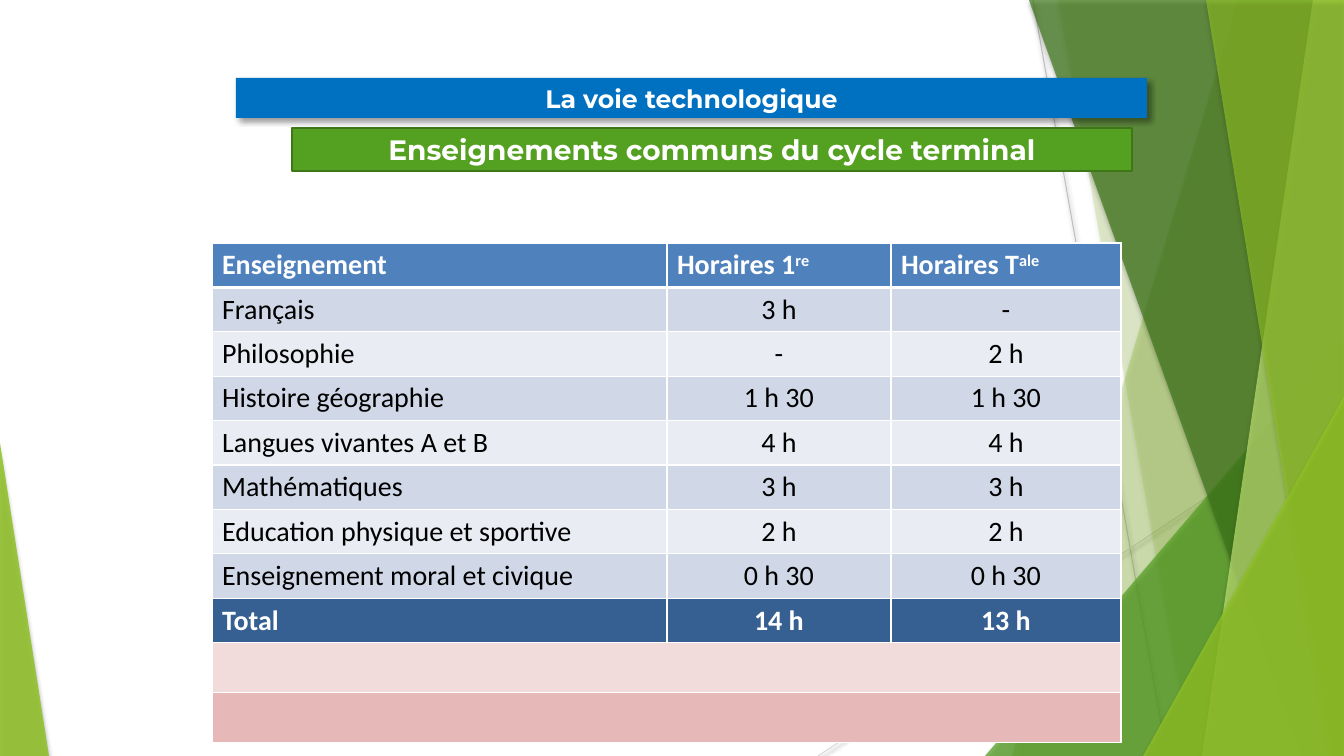
"""Build the slide of common lessons and weekly hours in the technological track."""
import lxml.etree
import pptx
import pptx.dml.color
import pptx.enum.shapes
import pptx.enum.text
import pptx.oxml.ns
import pptx.util

RGBColor = pptx.dml.color.RGBColor
MSO_SHAPE = pptx.enum.shapes.MSO_SHAPE
PP_ALIGN = pptx.enum.text.PP_ALIGN
qn = pptx.oxml.ns.qn

WHITE = RGBColor(0xFF, 0xFF, 0xFF)
BLACK = RGBColor(0x00, 0x00, 0x00)
LIME = RGBColor(0x90, 0xC2, 0x26)
PALE_LIME = RGBColor(0xC0, 0xE4, 0x74)
GREEN = RGBColor(0x54, 0xA0, 0x21)
DARK_GREEN = RGBColor(0x3F, 0x78, 0x19)
GREEN_EDGE = RGBColor(0x3E, 0x76, 0x18)
BLUE = RGBColor(0x00, 0x70, 0xC0)
HEADER_BLUE = RGBColor(0x4F, 0x81, 0xBD)
TOTAL_BLUE = RGBColor(0x37, 0x60, 0x92)
BAND_DARK = RGBColor(0xD0, 0xD8, 0xE7)
BAND_LIGHT = RGBColor(0xE9, 0xEC, 0xF3)
PINK_LIGHT = RGBColor(0xF2, 0xDC, 0xDB)
PINK_DARK = RGBColor(0xE6, 0xB9, 0xB8)
LINE_GREY = RGBColor(0xBF, 0xBF, 0xBF)
PALE_GREY = RGBColor(0xD9, 0xD9, 0xD9)

SCALE = 914400 / 100.8
WIDTH, HEIGHT = 1344, 756

LINE_SHADOW = (38, 3.1, 1.6, 90)
FACET_SHADOW = (35, 3, 2, 90)
BANNER_SHADOW = (40, 4, 3, 45)

RAYS = [
    ((1033, 0, 1167, 756), LINE_GREY),
    ((1344, 406, 818, 756), PALE_GREY),
]
FACETS = [
    ("band", (1238, 1012), LIME, 30),
    ("band", (1058, 1191), LIME, 20),
    ("triangle", (985, 336, 359, 420, 1), GREEN, 72),
    ("band", (1029, 1301), DARK_GREEN, 70),
    ("band", (1313, 1202), PALE_LIME, 70),
    ("band", (1206, 1329), LIME, 65),
    ("triangle", (1143, 396, 201, 360, 1), LIME, 80),
    ("triangle", (0, 443, 49, 313, 0), LIME, 85),
]
BANNERS = [
    ("Enseignements communs du cycle terminal", (292, 128, 840, 43), 20, GREEN, GREEN_EDGE, None),
    ("La voie technologique", (236, 78, 911, 40), 18, BLUE, None, BANNER_SHADOW),
]
HEADERS = [("Enseignement", ""), ("Horaires 1", "re"), ("Horaires T", "ale")]
LESSONS = [
    ("Français", "3 h", "-"),
    ("Philosophie", "-", "2 h"),
    ("Histoire géographie", "1 h 30", "1 h 30"),
    ("Langues vivantes A et B", "4 h", "4 h"),
    ("Mathématiques", "3 h", "3 h"),
    ("Education physique et sportive", "2 h", "2 h"),
    ("Enseignement moral et civique", "0 h 30", "0 h 30"),
]
TOTAL = ("Total", "14 h", "13 h")
EMPTY_ROWS = [PINK_LIGHT, PINK_DARK]
TABLE_LEFT, TABLE_TOP = 212, 243
COLUMN_WIDTHS = [455, 224, 230]
ROW_HEIGHT, EMPTY_ROW_HEIGHT = 44, 50


def px(*lengths):
    return [pptx.util.Emu(round(length * SCALE)) for length in lengths]


def set_shadow(shape, shadow=None):
    effects = lxml.etree.SubElement(shape._element.spPr, qn("a:effectLst"))
    if shadow:
        opacity, blur, distance, angle = shadow
        outer = lxml.etree.SubElement(
            effects, qn("a:outerShdw"), blurRad=str(pptx.util.Pt(blur)),
            dist=str(pptx.util.Pt(distance)), dir=str(angle * 60000), rotWithShape="0")
        color = lxml.etree.SubElement(outer, qn("a:srgbClr"), val=str(BLACK))
        lxml.etree.SubElement(color, qn("a:alpha"), val=str(opacity * 1000))


def paint(shape, color, edge=None):
    shape.fill.solid()
    shape.fill.fore_color.rgb = color
    if edge is None:
        shape.line.fill.background()
    else:
        shape.line.color.rgb = edge
        shape.line.width = pptx.util.Pt(2)


def set_font(paragraph, name, size, color, bold):
    paragraph.font.name = name
    paragraph.font.size = pptx.util.Pt(size)
    paragraph.font.color.rgb = color
    paragraph.font.bold = bold


def add_ray(slide, ends, color):
    ray = slide.shapes.add_connector(pptx.enum.shapes.MSO_CONNECTOR.STRAIGHT, *px(*ends))
    ray.line.color.rgb = color
    ray.line.width = pptx.util.Pt(0.75)
    set_shadow(ray, LINE_SHADOW)


def add_facet(slide, kind, geometry, color, opacity):
    if kind == "band":
        top_x, bottom_x = geometry
        builder = slide.shapes.build_freeform(top_x, 0, scale=SCALE)
        builder.add_line_segments([(WIDTH, 0), (WIDTH, HEIGHT), (bottom_x, HEIGHT)], close=True)
        facet = builder.convert_to_shape()
    else:
        *box, apex = geometry
        facet = slide.shapes.add_shape(MSO_SHAPE.ISOSCELES_TRIANGLE, *px(*box))
        facet.adjustments[0] = apex
    paint(facet, color)
    fill_color = facet._element.spPr.find(qn("a:solidFill")).find(qn("a:srgbClr"))
    lxml.etree.SubElement(fill_color, qn("a:alpha"), val=str(opacity * 1000))
    set_shadow(facet, FACET_SHADOW)


def add_banner(slide, text, box, size, color, edge, shadow):
    banner = slide.shapes.add_shape(MSO_SHAPE.RECTANGLE, *px(*box))
    paint(banner, color, edge)
    set_shadow(banner, shadow)
    paragraph = banner.text_frame.paragraphs[0]
    paragraph.text = text
    paragraph.alignment = PP_ALIGN.CENTER
    set_font(paragraph, "Montserrat", size, WHITE, True)


def style_cell(cell, color, top, bottom):
    cell.fill.solid()
    cell.fill.fore_color.rgb = color
    properties = cell._tc.get_or_add_tcPr()
    widths = {"a:lnL": 0.96, "a:lnR": 0.96, "a:lnT": top, "a:lnB": bottom}
    for position, (side, width) in enumerate(widths.items()):
        border = lxml.etree.Element(qn(side), w=str(pptx.util.Pt(width)))
        fill = lxml.etree.SubElement(border, qn("a:solidFill"))
        lxml.etree.SubElement(fill, qn("a:srgbClr"), val=str(WHITE))
        properties.insert(position, border)


def add_hours_table(slide):
    bands = [(BAND_DARK, BAND_LIGHT)[index % 2] for index in range(len(LESSONS))]
    colors = [HEADER_BLUE, *bands, TOTAL_BLUE, *EMPTY_ROWS]
    body = [[(text, "") for text in row] for row in [*LESSONS, TOTAL]]
    rows = [HEADERS, *body]
    heights = [ROW_HEIGHT] * len(rows) + [EMPTY_ROW_HEIGHT] * len(EMPTY_ROWS)
    box = px(TABLE_LEFT, TABLE_TOP, sum(COLUMN_WIDTHS), sum(heights))
    table = slide.shapes.add_table(len(heights), len(COLUMN_WIDTHS), *box).table
    table.first_row = table.horz_banding = False
    for column, width in zip(table.columns, px(*COLUMN_WIDTHS)):
        column.width = width
    for index, (row, height, color) in enumerate(zip(table.rows, px(*heights), colors)):
        row.height = height
        for cell in row.cells:
            style_cell(cell, color, 3 if index == 1 else 0.96, 3 if index == 0 else 0.96)
        if index >= len(rows):
            row.cells[0].merge(row.cells[len(COLUMN_WIDTHS) - 1])
            continue
        strong = index in (0, len(rows) - 1)
        for position, (text, superscript) in enumerate(rows[index]):
            paragraph = row.cells[position].text_frame.paragraphs[0]
            paragraph.add_run().text = text
            if superscript:
                run = paragraph.add_run()
                run.text = superscript
                run._r.get_or_add_rPr().set("baseline", "30000")
            if index and position:
                paragraph.alignment = PP_ALIGN.CENTER
            set_font(paragraph, "Calibri", 20, WHITE if strong else BLACK, strong)


def main():
    presentation = pptx.Presentation()
    presentation.slide_width, presentation.slide_height = px(WIDTH, HEIGHT)
    slide = presentation.slides.add_slide(presentation.slide_layouts[6])
    for ray in RAYS:
        add_ray(slide, *ray)
    for facet in FACETS:
        add_facet(slide, *facet)
    for banner in BANNERS:
        add_banner(slide, *banner)
    add_hours_table(slide)
    presentation.save("out.pptx")


if __name__ == "__main__":
    main()
